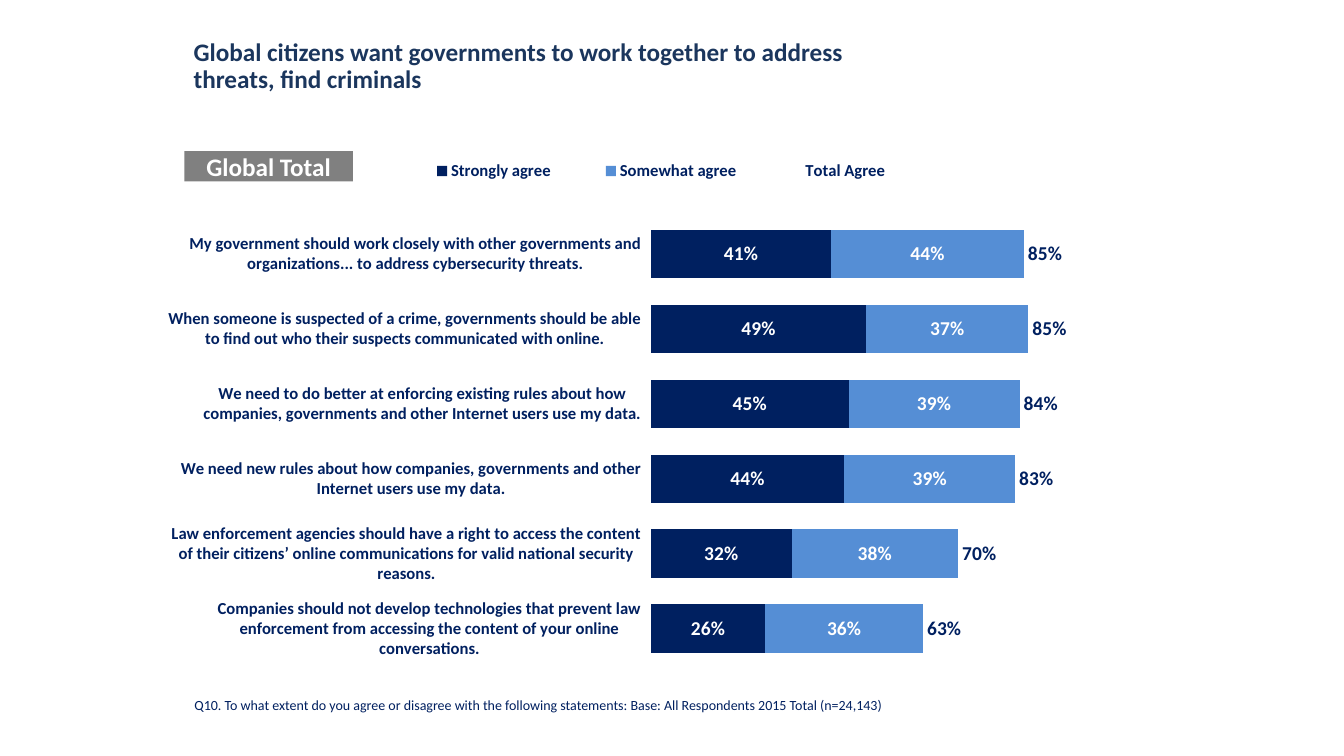
from pptx import Presentation
from pptx.chart.data import CategoryChartData
from pptx.dml.color import RGBColor
from pptx.enum.chart import XL_CHART_TYPE, XL_LABEL_POSITION, XL_LEGEND_POSITION, XL_TICK_MARK
from pptx.enum.shapes import MSO_SHAPE
from pptx.enum.text import MSO_ANCHOR, MSO_AUTO_SIZE, PP_ALIGN
from pptx.oxml import parse_xml
from pptx.oxml.ns import nsdecls
from pptx.util import Inches, Pt

COLORS = {
    "title": "1B365D",
    "navy": "002060",
    "blue": "558ED5",
    "gray": "808080",
    "white": "FFFFFF",
    "black": "000000",
}

STATEMENTS = [
    ("My government should work closely with other governments and organizations... "
     "to address cybersecurity threats.", 0.41, 0.44, 0.85),
    ("When someone is suspected of a crime, governments should be able to find out "
     "who their suspects communicated with online.", 0.49, 0.37, 0.85),
    ("We need to do better at enforcing existing rules about how companies, governments "
     "and other Internet users use my data.", 0.45, 0.39, 0.84),
    ("We need new rules about how companies, governments and other Internet users "
     "use my data.", 0.44, 0.39, 0.83),
    ("Law enforcement agencies should have a right to access the content of their "
     "citizens’ online communications for valid national security reasons.", 0.32, 0.38, 0.70),
    ("Companies should not develop technologies that prevent law enforcement from "
     "accessing the content of your online conversations.", 0.26, 0.36, 0.63),
]

SERIES = [
    ("Strongly agree", "navy", "white", XL_LABEL_POSITION.CENTER),
    ("Somewhat agree", "blue", "white", XL_LABEL_POSITION.CENTER),
    ("Total Agree", None, "navy", XL_LABEL_POSITION.INSIDE_BASE),
]


def rgb(name):
    return RGBColor.from_string(COLORS[name])


def set_font(font, size, color, bold=False):
    font.name = "Calibri"
    font.size = Pt(size)
    font.bold = bold
    font.color.rgb = rgb(color)


def place(sp, box):
    sp.left, sp.top, sp.width, sp.height = (Inches(v) for v in box)


def write(sp, text, size, color, bold=False, align=PP_ALIGN.LEFT, margin=None):
    tf = sp.text_frame
    tf.text = text
    tf.word_wrap = True
    tf.auto_size = MSO_AUTO_SIZE.NONE
    if margin is not None:
        tf.margin_left = tf.margin_right = Inches(margin)
        tf.margin_top = tf.margin_bottom = Inches(margin)
    p = tf.paragraphs[0]
    p.alignment = align
    set_font(p.font, size, color, bold)
    return p


def add_title(s, box):
    sp = s.shapes.title
    place(sp, box)
    p = write(sp, "Global citizens want governments to work together to address "
              "threats, find criminals", 18, "title", True, margin=0)
    p.line_spacing = 0.9
    sp.text_frame.vertical_anchor = MSO_ANCHOR.MIDDLE


def add_badge(s, box):
    sp = s.shapes.add_shape(MSO_SHAPE.RECTANGLE, *(Inches(v) for v in box))
    sp.shadow.inherit = False
    sp.fill.solid()
    sp.fill.fore_color.rgb = rgb("gray")
    sp.line.fill.background()
    write(sp, "Global Total", 18, "white", True, PP_ALIGN.CENTER, 0)
    sp.text_frame.vertical_anchor = MSO_ANCHOR.MIDDLE


def add_footnote(s, box):
    sp = s.shapes.add_textbox(*(Inches(v) for v in box))
    write(sp, "Q10. To what extent do you agree or disagree with the following statements: "
          "Base: All Respondents 2015 Total (n=24,143)", 10, "navy")


def manual_layout(x, y, w, h, target=""):
    return parse_xml(
        f'<c:layout {nsdecls("c")}><c:manualLayout>{target}'
        '<c:xMode val="edge"/><c:yMode val="edge"/>'
        f'<c:x val="{x}"/><c:y val="{y}"/><c:w val="{w}"/><c:h val="{h}"/>'
        '</c:manualLayout></c:layout>')


def format_axes(chart):
    axis = chart.category_axis
    axis.reverse_order = True
    axis.major_tick_mark = XL_TICK_MARK.OUTSIDE
    axis.format.line.fill.background()
    set_font(axis.tick_labels.font, 12, "navy", True)
    axis = chart.value_axis
    axis.minimum_scale, axis.maximum_scale, axis.major_unit = 0, 1, 0.2
    axis.has_major_gridlines = False
    axis.visible = False


def format_series(chart):
    plot = chart.plots[0]
    plot.gap_width, plot.overlap = 55, 100
    plot.vary_by_categories = False
    for series, (_, fill, label_color, position) in zip(plot.series, SERIES):
        if fill:
            series.format.fill.solid()
            series.format.fill.fore_color.rgb = rgb(fill)
        else:
            series.format.fill.background()
        series.format.line.fill.background()
        labels = series.data_labels
        labels.show_value = True
        labels.number_format = "0%"
        labels.number_format_is_linked = False
        labels.position = position
        set_font(labels.font, 14, label_color, True)


def format_legend(chart):
    chart.has_legend = True
    legend = chart.legend
    legend.position = XL_LEGEND_POSITION.RIGHT
    legend.include_in_layout = False
    set_font(legend.font, 12, "navy", True)
    element = legend._element
    for old in element.xpath("c:layout"):
        element.remove(old)
    element.xpath("c:legendPos")[0].addnext(manual_layout(0.23, 0.09, 0.6, 0.09))


def add_agreement_chart(s, box):
    data = CategoryChartData(number_format="0%")
    data.categories = [row[0] for row in STATEMENTS]
    for i, (name, *_) in enumerate(SERIES, 1):
        data.add_series(name, [row[i] for row in STATEMENTS])
    chart = s.shapes.add_chart(
        XL_CHART_TYPE.BAR_STACKED, *(Inches(v) for v in box), data).chart
    chart.has_title = False
    set_font(chart.font, 18, "black")
    format_axes(chart)
    format_series(chart)
    format_legend(chart)
    area = chart._chartSpace.xpath("c:chart/c:plotArea")[0]
    for old in area.xpath("c:layout"):
        area.remove(old)
    inner = '<c:layoutTarget val="inner"/>'
    area.insert(0, manual_layout(0.519, 0.214, 0.481, 0.775, inner))


def main():
    prs = Presentation()
    prs.slide_width, prs.slide_height = Inches(13.33), Inches(7.5)
    s = prs.slides.add_slide(prs.slide_layouts[5])
    add_agreement_chart(s, (1.67, 0.92, 9.14, 5.75))
    add_title(s, (1.92, 0.39, 7.13, 0.55))
    add_badge(s, (1.83, 1.5, 1.67, 0.3))
    add_footnote(s, (1.83, 6.86, 8.33, 0.27))
    prs.save("out.pptx")


if __name__ == "__main__":
    main()
